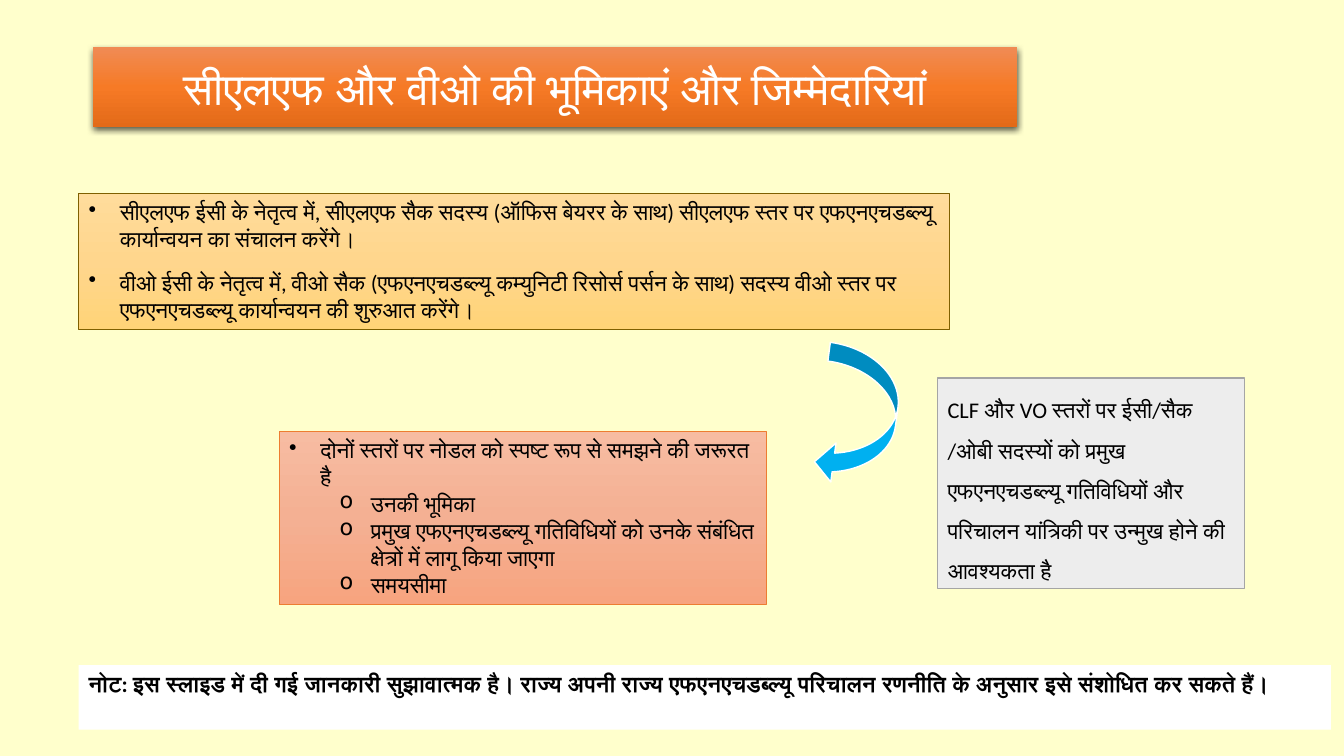
from copy import deepcopy
from dataclasses import dataclass

from lxml.etree import SubElement
from pptx import Presentation
from pptx.dml.color import RGBColor
from pptx.enum.shapes import MSO_SHAPE as Preset
from pptx.enum.text import MSO_ANCHOR as Anchor, MSO_AUTO_SIZE as AutoSize, PP_ALIGN as Align
from pptx.oxml.ns import qn
from pptx.util import Pt

EMU_PER_PX = 9144
BULLET_HANG = 31
LEVEL_INDENT = 50
BULLETS = ("•", "o")


@dataclass(frozen=True)
class Theme:
    font: str = "Calibri"
    title_size: int = 32
    body_size: int = 16
    background: str = "FFFFCC"
    ink: str = "000000"
    white: str = "FFFFFF"
    title_fill: tuple = ("F08B54", "F67A26", "E36A18")
    roles_fill: tuple = ("FFDC9B", "FFD68D", "FFD478")
    roles_line: str = "7F6000"
    nodal_fill: tuple = ("F7BCA2", "F4B093", "F7A47F")
    nodal_line: str = "ED7D31"
    orientation_fill: tuple = ("EDEDED",)
    orientation_line: str = "A5A5A5"
    arrow_fill: tuple = ("00B0F0",)


def px(value):
    return value * EMU_PER_PX


def rgb(value):
    return RGBColor.from_string(value)


class SlideBuilder:
    def __init__(self, presentation, theme):
        self.theme = theme
        self.slide = presentation.slides.add_slide(presentation.slide_layouts[5])
        background = self.slide.background.fill
        background.solid()
        background.fore_color.rgb = rgb(theme.background)

    def paint(self, shape, colours, line=None, line_width=0.75):
        shape.shadow.inherit = False
        if len(colours) == 1:
            shape.fill.solid()
            shape.fill.fore_color.rgb = rgb(colours[0])
        else:
            self.gradient(shape, colours)
        if line:
            shape.line.color.rgb = rgb(line)
            shape.line.width = Pt(line_width)
        else:
            shape.line.fill.background()

    def gradient(self, shape, colours):
        shape.fill.gradient()
        shape.fill.gradient_angle = 270
        stop_list = shape.fill._xPr.find(".//" + qn("a:gsLst"))
        stop_list.append(deepcopy(stop_list[-1]))
        for index, (stop, colour) in enumerate(zip(shape.fill.gradient_stops, colours)):
            stop.position = index / (len(colours) - 1)
            stop.color.rgb = rgb(colour)

    def drop_shadow(self, shape):
        effects = shape._element.spPr.find(qn("a:effectLst"))
        shadow = SubElement(effects, qn("a:outerShdw"), blurRad=str(Pt(4.5)),
                            dist=str(Pt(1.5)), dir="5400000", algn="ctr", rotWithShape="0")
        colour = SubElement(shadow, qn("a:srgbClr"), val=self.theme.ink)
        SubElement(colour, qn("a:alpha"), val="63000")

    def frame(self, shape, anchor):
        text_frame = shape.text_frame
        text_frame.word_wrap = True
        text_frame.auto_size = AutoSize.NONE
        text_frame.vertical_anchor = anchor
        text_frame.margin_left = text_frame.margin_right = px(10)
        text_frame.margin_top = text_frame.margin_bottom = px(5)
        return text_frame

    def run(self, paragraph, text, size, colour, bold=False):
        run = paragraph.add_run()
        run.text = text
        run.font.name = self.theme.font
        run.font.size = Pt(size)
        run.font.bold = bold
        run.font.color.rgb = rgb(colour)

    def bullet(self, paragraph, level):
        paragraph.level = level
        properties = paragraph._p.get_or_add_pPr()
        properties.set("marL", str(px(BULLET_HANG + level * LEVEL_INDENT)))
        properties.set("indent", str(px(-BULLET_HANG)))
        colour = SubElement(properties, qn("a:buClr"))
        SubElement(colour, qn("a:srgbClr"), val=self.theme.ink)
        SubElement(properties, qn("a:buChar"), char=BULLETS[level])

    def title(self, text, left, top, width, height):
        shape = self.slide.shapes.title
        shape.left, shape.top, shape.width, shape.height = map(px, (left, top, width, height))
        self.paint(shape, self.theme.title_fill)
        self.drop_shadow(shape)
        paragraph = self.frame(shape, Anchor.MIDDLE).paragraphs[0]
        paragraph.alignment = Align.CENTER
        self.run(paragraph, text, self.theme.title_size, self.theme.white)

    def box(self, position, colours, line=None):
        shape = self.slide.shapes.add_shape(Preset.RECTANGLE, *map(px, position))
        self.paint(shape, colours, line)
        return self.frame(shape, Anchor.TOP)

    def text_box(self, text, position, colours, line=None, bold=False, line_spacing=1.0):
        paragraph = self.box(position, colours, line).paragraphs[0]
        paragraph.alignment = Align.LEFT
        paragraph.line_spacing = line_spacing
        self.run(paragraph, text, self.theme.body_size, self.theme.ink, bold)

    def bullet_box(self, items, position, colours, line, gap=0):
        text_frame = self.box(position, colours, line)
        for index, (level, text) in enumerate(items):
            paragraph = text_frame.add_paragraph() if index else text_frame.paragraphs[0]
            paragraph.alignment = Align.LEFT
            if index and gap:
                paragraph.space_before = Pt(gap)
            self.bullet(paragraph, level)
            self.run(paragraph, text, self.theme.body_size, self.theme.ink)

    def curved_arrow(self, position, rotation, adjustments):
        shape = self.slide.shapes.add_shape(Preset.CURVED_DOWN_ARROW, *map(px, position))
        shape.rotation = rotation
        for index, value in enumerate(adjustments):
            shape.adjustments[index] = value
        self.paint(shape, self.theme.arrow_fill, self.theme.white, 1)


def main():
    presentation = Presentation()
    presentation.slide_width = px(1333)
    presentation.slide_height = px(750)
    theme = Theme()
    builder = SlideBuilder(presentation, theme)

    builder.title("सीएलएफ और वीओ की भूमिकाएं और जिम्मेदारियां", 92, 47, 917, 79)
    builder.curved_arrow((782, 376, 139, 75), 97.6, (0.25, 0.52, 0.25))
    builder.bullet_box(
        [
            (0, "सीएलएफ ईसी के नेतृत्व में, सीएलएफ सैक सदस्य (ऑफिस बेयरर के साथ) सीएलएफ स्तर पर "
                "एफएनएचडब्ल्यू कार्यान्वयन का संचालन करेंगे।"),
            (0, "वीओ ईसी के नेतृत्व में, वीओ सैक (एफएनएचडब्ल्यू कम्युनिटी रिसोर्स पर्सन के साथ) "
                "सदस्य वीओ स्तर पर एफएनएचडब्ल्यू कार्यान्वयन की शुरुआत करेंगे।"),
        ],
        (78, 192, 864, 135), theme.roles_fill, theme.roles_line, gap=12)
    builder.text_box(
        "CLF और VO स्तरों पर ईसी/सैक /ओबी सदस्यों को प्रमुख एफएनएचडब्ल्यू गतिविधियों और "
        "परिचालन यांत्रिकी पर उन्मुख होने की आवश्यकता है",
        (930, 375, 304, 209), theme.orientation_fill, theme.orientation_line, line_spacing=1.5)
    builder.bullet_box(
        [
            (0, "दोनों स्तरों पर नोडल को स्पष्ट रूप से समझने की जरूरत है"),
            (1, "उनकी भूमिका"),
            (1, "प्रमुख एफएनएचडब्ल्यू गतिविधियों को उनके संबंधित क्षेत्रों में लागू किया जाएगा"),
            (1, "समयसीमा"),
        ],
        (277, 428, 483, 172), theme.nodal_fill, theme.nodal_line)
    builder.text_box(
        "नोट: इस स्लाइड में दी गई जानकारी सुझावात्मक है। राज्य अपनी राज्य एफएनएचडब्ल्यू परिचालन "
        "रणनीति के अनुसार इसे संशोधित कर सकते हैं।",
        (78, 660, 1242, 64), (theme.white,), bold=True)

    presentation.save("out.pptx")


if __name__ == "__main__":
    main()
